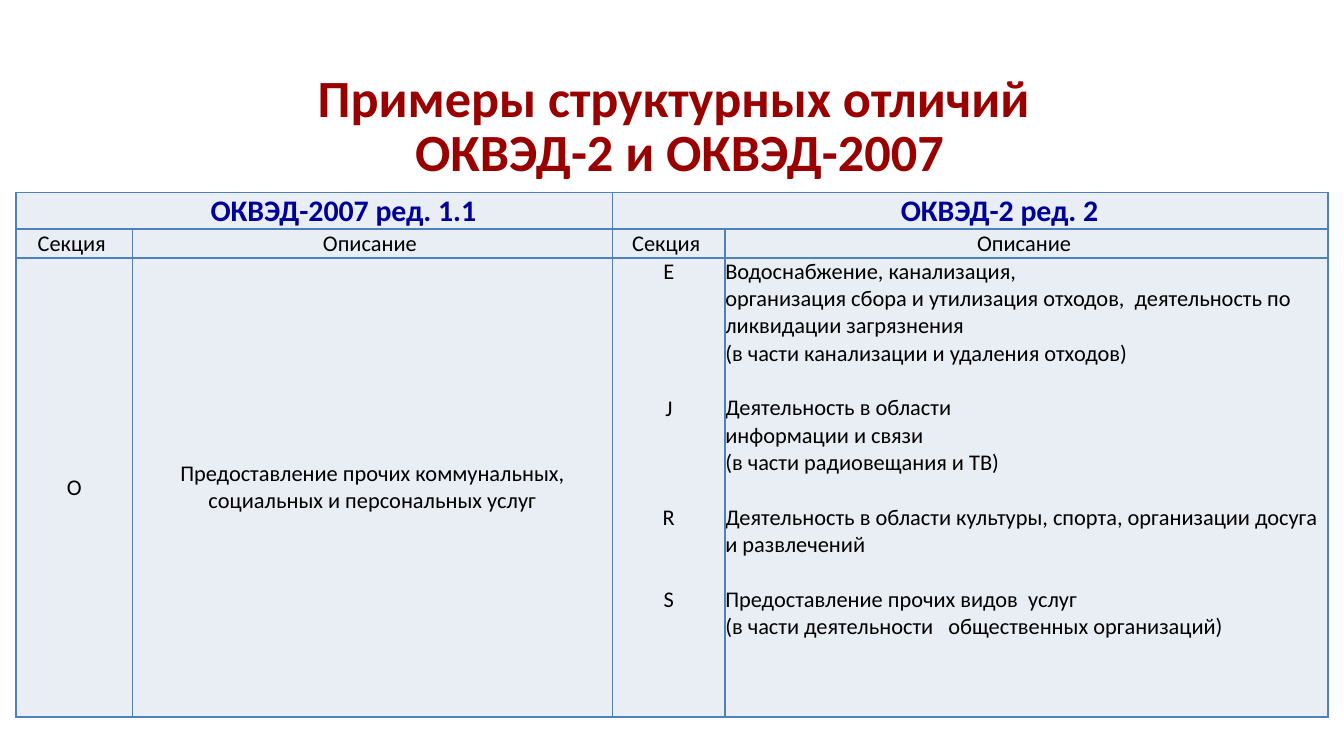
from lxml.etree import fromstring
from pptx import Presentation
from pptx.dml.color import RGBColor
from pptx.enum.text import MSO_ANCHOR, PP_ALIGN
from pptx.oxml.ns import nsdecls
from pptx.util import Pt

LINE = 14.65  # height of one 12 pt line
CELL_FILL = "E9EDF4"
BORDER = "4F81BD"


def write(frame, text, size=12, color="000000", bold=False, align=PP_ALIGN.CENTER,
          anchor=MSO_ANCHOR.MIDDLE, margin=None, spacing=None, indent=0, gaps=None):
    """Write one paragraph per line; gaps maps a line number to blank lines before it."""
    frame.word_wrap = True
    frame.vertical_anchor = anchor
    if margin is not None:
        frame.margin_left = frame.margin_right = Pt(margin)
        frame.margin_top = frame.margin_bottom = Pt(margin)
    for number, line in enumerate(text.split("\n")):
        para = frame.paragraphs[0] if number == 0 else frame.add_paragraph()
        para.alignment = align
        if spacing:
            para.line_spacing = Pt(spacing)
        if indent:
            properties = para._p.get_or_add_pPr()
            properties.set("marL", "0")
            properties.set("indent", str(Pt(indent)))
        if gaps and number in gaps:
            para.space_before = Pt(gaps[number] * LINE)
        span = para.add_run()
        span.text = line
        span.font.name = "Calibri"
        span.font.size = Pt(size)
        span.font.bold = bold
        span.font.color.rgb = RGBColor.from_string(color)


deck = Presentation()
deck.slide_width, deck.slide_height = Pt(720), Pt(405)
page = deck.slides.add_slide(deck.slide_layouts[6])

# Table grid
column_widths = [62.5, 257, 60.5, 323]
row_heights = [19.5, 15.5, 245.8]
table = page.shapes.add_table(
    len(row_heights), len(column_widths), Pt(8.6), Pt(103.2),
    Pt(sum(column_widths)), Pt(sum(row_heights))).table
table.first_row = table.horz_banding = False
for column, width in zip(table.columns, column_widths):
    column.width = Pt(width)
for row, height in zip(table.rows, row_heights):
    row.height = Pt(height)

for cell in table.iter_cells():
    cell.fill.solid()
    cell.fill.fore_color.rgb = RGBColor.from_string(CELL_FILL)
    cell.margin_left = cell.margin_right = cell.margin_top = cell.margin_bottom = 0
    properties = cell._tc.get_or_add_tcPr()
    for position, side in enumerate("LRTB"):
        properties.insert(position, fromstring(
            f'<a:ln{side} {nsdecls("a")} w="{Pt(1)}"><a:solidFill>'
            f'<a:srgbClr val="{BORDER}"/></a:solidFill></a:ln{side}>'))

# Headings: one edition over each pair of columns
for first, edition in ((0, "ОКВЭД-2007 ред. 1.1 "), (2, "ОКВЭД-2 ред. 2 ")):
    heading = table.cell(0, first)
    heading.merge(table.cell(0, first + 1))
    heading.vertical_anchor = MSO_ANCHOR.MIDDLE
    write(heading.text_frame, edition, size=16, color="000099", bold=True, indent=35)
    for offset, label in enumerate(("Секция ", "Описание ")):
        cell = table.cell(1, first + offset)
        cell.vertical_anchor = MSO_ANCHOR.MIDDLE
        write(cell.text_frame, label)

# Old section on the left
for column, text in enumerate(
        ("O", "Предоставление прочих коммунальных, социальных и персональных услуг")):
    cell = table.cell(2, column)
    cell.vertical_anchor = MSO_ANCHOR.MIDDLE
    write(cell.text_frame, text)

# New sections on the right, each letter level with its description
descriptions = """Водоснабжение, канализация,
организация сбора и утилизация отходов,  деятельность по ликвидации загрязнения
(в части канализации и удаления отходов)
Деятельность в области
информации и связи
(в части радиовещания и ТВ)
Деятельность в области культуры, спорта, организации досуга и развлечений
Предоставление прочих видов  услуг
(в части деятельности   общественных организаций)"""
write(table.cell(2, 2).text_frame, "E\nJ\nR\nS", anchor=MSO_ANCHOR.TOP,
      gaps={1: 4, 2: 3, 3: 2})
write(table.cell(2, 3).text_frame, descriptions, align=PP_ALIGN.LEFT,
      anchor=MSO_ANCHOR.TOP, gaps={3: 1, 6: 1, 7: 1})

# Title
title = page.shapes.add_textbox(Pt(16.5), Pt(44), Pt(695), Pt(57))
write(title.text_frame, "Примеры структурных отличий \nОКВЭД-2 и ОКВЭД-2007",
      size=28, color="990000", bold=True, anchor=MSO_ANCHOR.BOTTOM, spacing=29)

deck.save("out.pptx")
